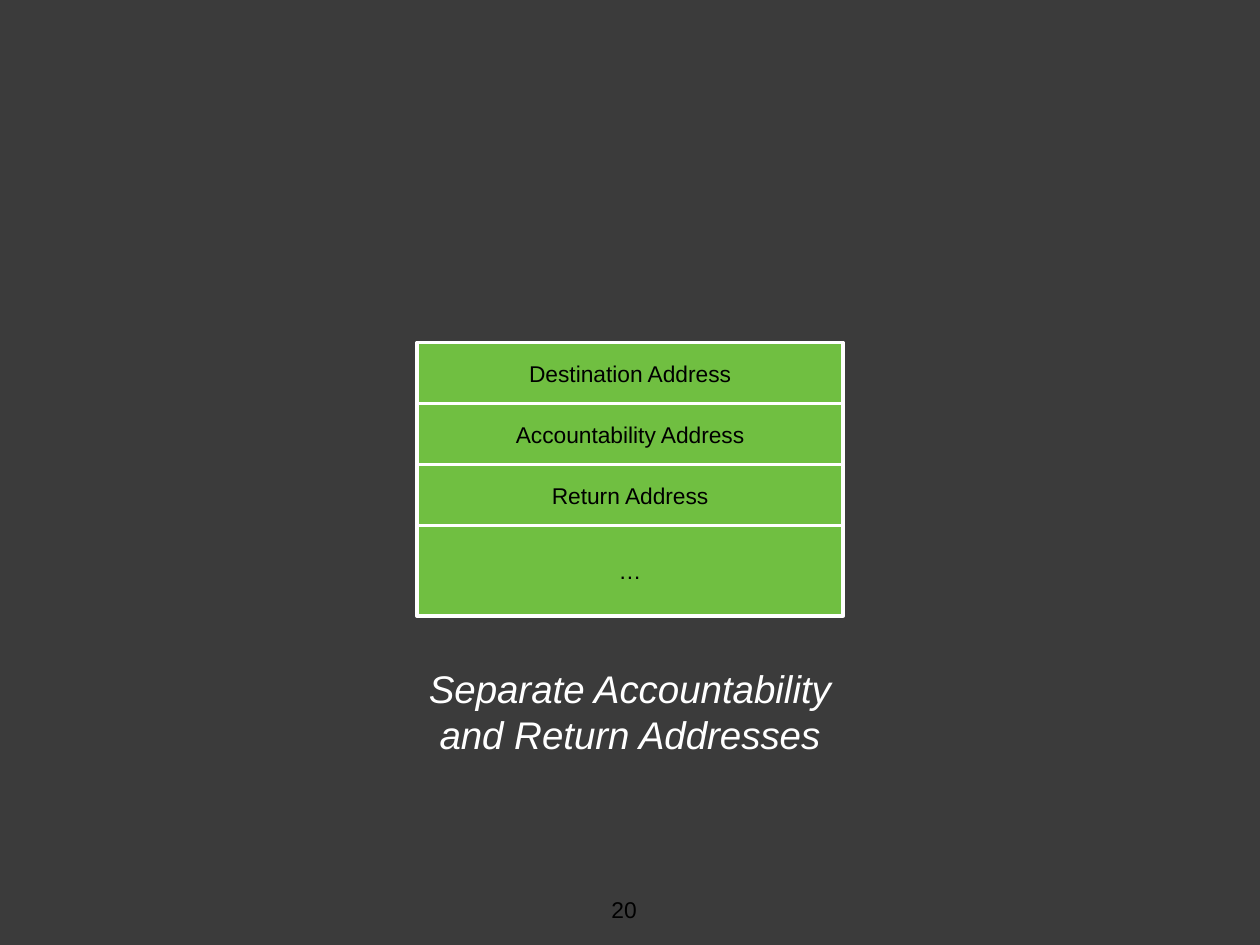
"""Build a slide showing a packet header with separate accountability and return addresses."""
from pptx import Presentation
from pptx.dml.color import RGBColor
from pptx.enum.shapes import MSO_SHAPE as Shape
from pptx.enum.text import MSO_ANCHOR as Anchor, PP_ALIGN as Align
from pptx.util import Pt


def color(value):
    return RGBColor.from_string(value)


def write(shape, lines, align, ink, frame_format, font_format):
    frame = shape.text_frame
    frame.margin_left = frame.margin_right = frame.margin_top = frame.margin_bottom = 0
    for name, value in frame_format.items():
        setattr(frame, name, value)
    frame.text = "\n".join(lines)
    for paragraph in frame.paragraphs:
        paragraph.alignment = align
        font = paragraph.runs[0].font
        font.color.rgb = color(ink)
        for name, value in font_format.items():
            setattr(font, name, value)


presentation = Presentation()
presentation.slide_width, presentation.slide_height = Pt(720), Pt(540)
slide = presentation.slides.add_slide(presentation.slide_layouts[6])
slide.background.fill.solid()
slide.background.fill.fore_color.rgb = color("3B3B3B")

small = {"name": "Arial", "size": Pt(13)}
large = {"name": "Arial", "size": Pt(22), "italic": True}
field_width, field_height = 243.6, 34.8
fields = [
    ("Destination Address", field_height),
    ("Accountability Address", field_height),
    ("Return Address", field_height),
    ("…", 51.8),
]

top = 195.8
for label, height in fields:
    field = slide.shapes.add_shape(
        Shape.RECTANGLE, Pt((720 - field_width) / 2), Pt(top), Pt(field_width), Pt(height))
    field.shadow.inherit = False
    field.fill.solid()
    field.fill.fore_color.rgb = color("70BF41")
    field.line.color.rgb = color("FFFFFF")
    field.line.width = Pt(2)
    write(field, [label], Align.CENTER, "000000",
          {"vertical_anchor": Anchor.MIDDLE, "word_wrap": True}, small)
    top += height

caption = slide.shapes.add_textbox(Pt(235), Pt(376.6), Pt(250), Pt(59))
write(caption, ["Separate Accountability", "and Return Addresses"], Align.CENTER, "FFFFFF",
      {"vertical_anchor": Anchor.MIDDLE, "word_wrap": False}, large)

page_number = slide.shapes.add_textbox(Pt(349.4), Pt(512), Pt(20), Pt(21))
write(page_number, ["20"], Align.LEFT, "000000",
      {"vertical_anchor": Anchor.TOP, "word_wrap": True}, small)

presentation.save("out.pptx")
